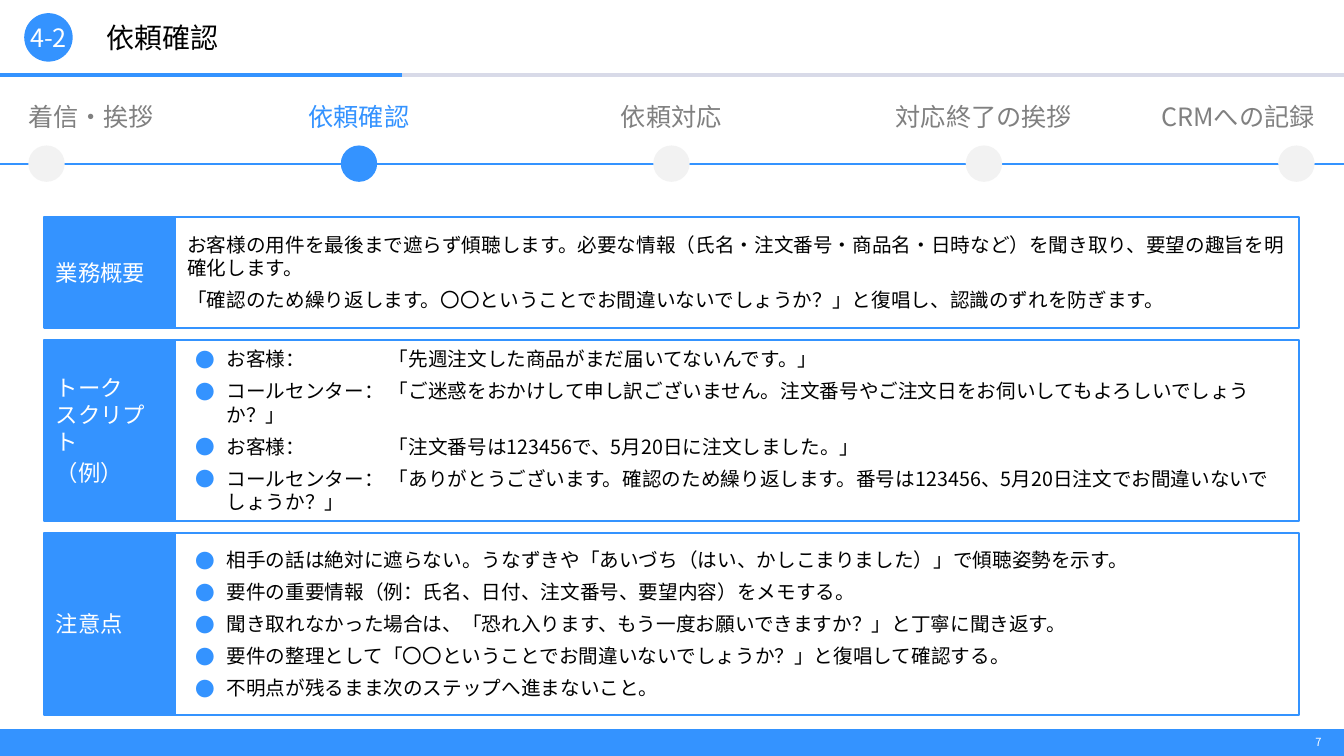
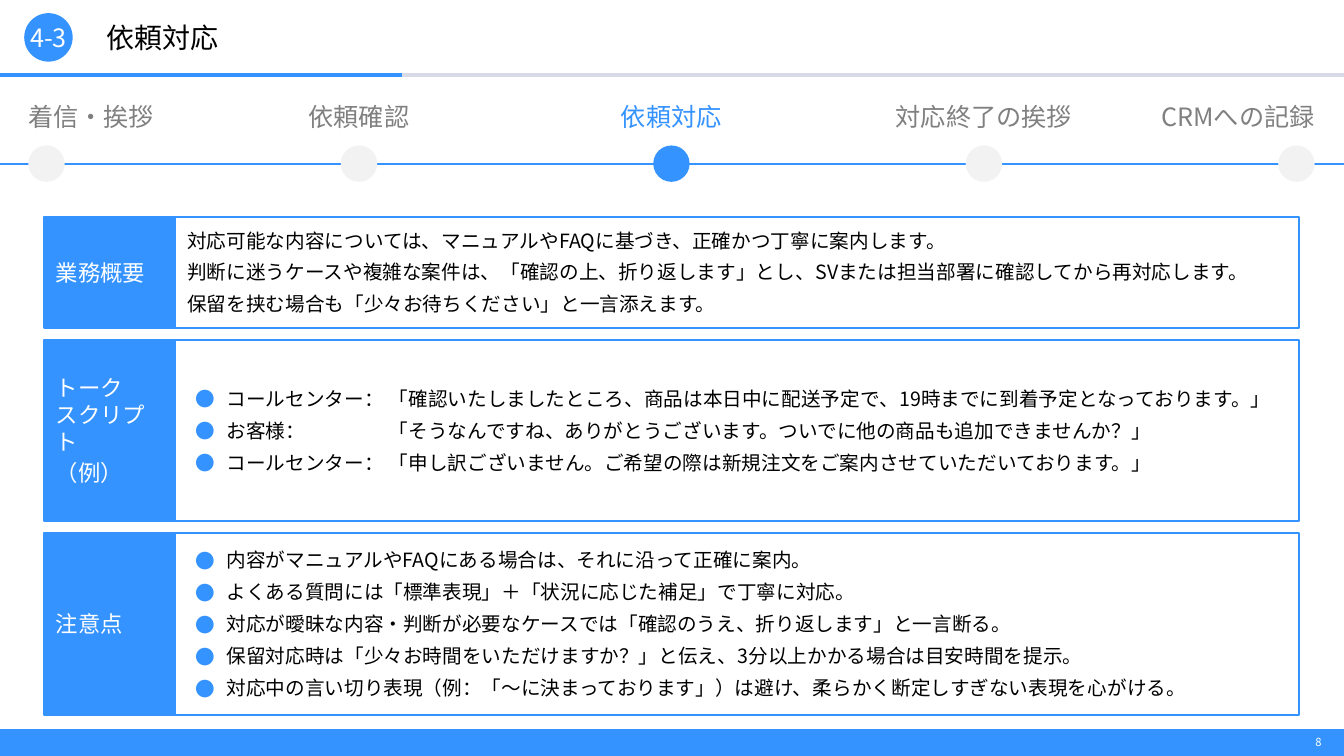
from dataclasses import dataclass

from lxml.etree import SubElement
from pptx import Presentation
from pptx.dml.color import RGBColor
from pptx.enum.shapes import MSO_CONNECTOR, MSO_SHAPE
from pptx.enum.text import MSO_ANCHOR, MSO_AUTO_SIZE, PP_ALIGN
from pptx.oxml.ns import qn
from pptx.util import Pt


@dataclass(frozen=True)
class Theme:
    font: str = "Noto Sans CJK JP"
    accent: str = "3493FF"
    rule: str = "D8DAE8"
    idle_dot: str = "F2F2F2"
    idle_label: str = "808080"
    ink: str = "000000"
    paper: str = "FFFFFF"
    title_size: int = 20
    step_size: int = 18
    heading_size: int = 16
    body_size: int = 14
    number_size: int = 8
    line_factor: float = 1.2


THEME = Theme()
WIDTH, HEIGHT = 960, 540

STEPS = ["着信・挨拶", "依頼確認", "依頼対応", "対応終了の挨拶", "CRMへの記録"]

SECTIONS = [
    {"heading": ["業務概要"], "key": "overview", "top": 154.8, "height": 79.2, "bullets": False},
    {"heading": ["トーク\vスクリプト", "（例）"], "key": "script", "top": 242.6, "height": 129.6, "bullets": True},
    {"heading": ["注意点"], "key": "cautions", "top": 380.9, "height": 129.6, "bullets": True},
]

PAGES = [
    {
        "number": 7,
        "chapter": "4-2",
        "step": 1,
        "overview": [
            "お客様の用件を最後まで遮らず傾聴します。必要な情報（氏名・注文番号・商品名・日時など）を聞き取り、要望の趣旨を明確化します。",
            "「確認のため繰り返します。〇〇ということでお間違いないでしょうか？」と復唱し、認識のずれを防ぎます。",
        ],
        "script": [
            "お客様：\t「先週注文した商品がまだ届いてないんです。」",
            "コールセンター：\t「ご迷惑をおかけして申し訳ございません。注文番号やご注文日をお伺いしてもよろしいでしょうか？」",
            "お客様：\t「注文番号は123456で、5月20日に注文しました。」",
            "コールセンター：\t「ありがとうございます。確認のため繰り返します。番号は123456、5月20日注文でお間違いないでしょうか？」",
        ],
        "cautions": [
            "相手の話は絶対に遮らない。うなずきや「あいづち（はい、かしこまりました）」で傾聴姿勢を示す。",
            "要件の重要情報（例：氏名、日付、注文番号、要望内容）をメモする。",
            "聞き取れなかった場合は、「恐れ入ります、もう一度お願いできますか？」と丁寧に聞き返す。",
            "要件の整理として「〇〇ということでお間違いないでしょうか？」と復唱して確認する。",
            "不明点が残るまま次のステップへ進まないこと。",
        ],
    },
    {
        "number": 8,
        "chapter": "4-3",
        "step": 2,
        "overview": [
            "対応可能な内容については、マニュアルやFAQに基づき、正確かつ丁寧に案内します。",
            "判断に迷うケースや複雑な案件は、「確認の上、折り返します」とし、SVまたは担当部署に確認してから再対応します。",
            "保留を挟む場合も「少々お待ちください」と一言添えます。",
        ],
        "script": [
            "コールセンター：\t「確認いたしましたところ、商品は本日中に配送予定で、19時までに到着予定となっております。」",
            "お客様：\t「そうなんですね、ありがとうございます。ついでに他の商品も追加できませんか？」",
            "コールセンター：\t「申し訳ございません。ご希望の際は新規注文をご案内させていただいております。」",
        ],
        "cautions": [
            "内容がマニュアルやFAQにある場合は、それに沿って正確に案内。",
            "よくある質問には「標準表現」＋「状況に応じた補足」で丁寧に対応。",
            "対応が曖昧な内容・判断が必要なケースでは「確認のうえ、折り返します」と一言断る。",
            "保留対応時は「少々お時間をいただけますか？」と伝え、3分以上かかる場合は目安時間を提示。",
            "対応中の言い切り表現（例：「〜に決まっております」）は避け、柔らかく断定しすぎない表現を心がける。",
        ],
    },
]

DOT, DOT_TOP, DOT_LEFT, DOT_STEP = 26, 103.9, 20.2, 223.2
LABEL_WIDTH, LABEL_INSET = 150.4, 7.2
HEADING_LEFT, HEADING_WIDTH, BODY_WIDTH = 31.4, 93.8, 803
BULLET_MARGIN, BULLET_HANG, QUOTE_TAB = 28.1, 22.3, 144


def rgb(code):
    return RGBColor.from_string(code)


def place(shape, left, top, width, height):
    shape.left, shape.top, shape.width, shape.height = map(Pt, (left, top, width, height))


def write(shape, lines, size, color, align=PP_ALIGN.LEFT, gap=0, margins=(7.2, 3.6, 7.2, 3.6), wrap=True):
    frame = shape.text_frame
    frame.text = "\n".join(lines)
    frame.auto_size = MSO_AUTO_SIZE.NONE
    frame.word_wrap = wrap
    frame.vertical_anchor = MSO_ANCHOR.MIDDLE
    frame.margin_left, frame.margin_top, frame.margin_right, frame.margin_bottom = map(Pt, margins)
    for index, paragraph in enumerate(frame.paragraphs):
        paragraph.alignment = align
        paragraph.line_spacing = Pt(round(size * THEME.line_factor, 1))
        paragraph.space_before = Pt(gap if index else 0)
        for run in paragraph.runs:
            run.font.name = THEME.font
            run.font.size = Pt(size)
            run.font.bold = False
            run.font.color.rgb = rgb(color)
            SubElement(run.font._element, qn("a:ea"), typeface=THEME.font)


def set_bullets(frame, bulleted):
    for paragraph in frame.paragraphs:
        properties = paragraph._p.get_or_add_pPr()
        properties.set("marL", str(Pt(BULLET_MARGIN if bulleted else 0)))
        properties.set("indent", str(Pt(-BULLET_HANG if bulleted else 0)))
        if not bulleted:
            SubElement(properties, qn("a:buNone"))
            continue
        properties.set("defTabSz", str(Pt(QUOTE_TAB / 2)))
        bullet_color = SubElement(properties, qn("a:buClr"))
        SubElement(bullet_color, qn("a:srgbClr"), val=THEME.accent)
        SubElement(properties, qn("a:buFont"), typeface=THEME.font)
        SubElement(properties, qn("a:buChar"), char="●")
        tabs = SubElement(properties, qn("a:tabLst"))
        SubElement(tabs, qn("a:tab"), pos=str(Pt(QUOTE_TAB)), algn="l")


def add_rule(slide, y, length, color, weight):
    rule = slide.shapes.add_connector(MSO_CONNECTOR.STRAIGHT, 0, Pt(y), Pt(length), Pt(y))
    rule.line.color.rgb = rgb(color)
    rule.line.width = Pt(weight)
    SubElement(rule._element.spPr, qn("a:effectLst"))


def add_block(slide, kind, box, fill):
    block = slide.shapes.add_shape(kind, *map(Pt, box))
    block.shadow.inherit = False
    block.fill.solid()
    block.fill.fore_color.rgb = rgb(fill)
    block.line.fill.background()
    return block


def add_label(slide, box, text, size, color, align):
    label = slide.shapes.add_textbox(*map(Pt, box))
    write(label, [text], size, color, align)


def outline(shape):
    shape.line.color.rgb = rgb(THEME.accent)
    shape.line.width = Pt(1.5)


def add_frame(slide, page):
    title = slide.shapes.title
    place(title, 28.8, 11.5, 902, 30.2)
    write(title, [STEPS[page["step"]]], THEME.title_size, THEME.ink, margins=(47.2, 3.6, 7.2, 3.6))
    add_rule(slide, 53.3, WIDTH, THEME.rule, 3)
    add_rule(slide, 53.3, 287.3, THEME.accent, 3)
    badge = add_block(slide, MSO_SHAPE.OVAL, (17.3, 9.4, 34.6, 34.6), THEME.accent)
    write(badge, [page["chapter"]], THEME.step_size, THEME.paper, PP_ALIGN.CENTER,
          margins=(5.8, 5.8, 5.8, 5.8), wrap=False)
    add_rule(slide, 530.6, WIDTH, THEME.accent, 20)
    add_label(slide, (915.8, 521.3, 35.3, 18), str(page["number"]), THEME.number_size, THEME.paper, PP_ALIGN.RIGHT)


def add_progress(slide, current):
    add_rule(slide, DOT_TOP + DOT / 2, WIDTH, THEME.accent, 1.5)
    for index, step in enumerate(STEPS):
        left = DOT_LEFT + DOT_STEP * index
        if index == 0:
            label_left, align = left - LABEL_INSET, PP_ALIGN.LEFT
        elif index == len(STEPS) - 1:
            label_left, align = left + DOT + LABEL_INSET - LABEL_WIDTH, PP_ALIGN.RIGHT
        else:
            label_left, align = left + (DOT - LABEL_WIDTH) / 2, PP_ALIGN.CENTER
        active = index == current
        add_label(slide, (label_left, 70.6, LABEL_WIDTH, 25.2), step, THEME.step_size,
                  THEME.accent if active else THEME.idle_label, align)
        add_block(slide, MSO_SHAPE.OVAL, (left, DOT_TOP, DOT, DOT), THEME.accent if active else THEME.idle_dot)


def add_section(slide, section, body, lines):
    top, height = section["top"], section["height"]
    margins = (8.6, 3.6, 7.2, 3.6)
    place(body, HEADING_LEFT + HEADING_WIDTH, top, BODY_WIDTH, height)
    outline(body)
    write(body, lines, THEME.body_size, THEME.ink, gap=6, margins=margins)
    set_bullets(body.text_frame, section["bullets"])
    heading = add_block(slide, MSO_SHAPE.RECTANGLE, (HEADING_LEFT, top, HEADING_WIDTH, height), THEME.accent)
    outline(heading)
    write(heading, section["heading"], THEME.heading_size, THEME.paper, gap=3, margins=margins)


def main():
    deck = Presentation()
    deck.slide_width, deck.slide_height = Pt(WIDTH), Pt(HEIGHT)
    comparison = deck.slide_layouts.get_by_name("Comparison")
    for page in PAGES:
        slide = deck.slides.add_slide(comparison)
        bodies = [holder for holder in slide.placeholders if holder.placeholder_format.idx > 0]
        add_frame(slide, page)
        for section, body in zip(SECTIONS, bodies):
            add_section(slide, section, body, page[section["key"]])
        for unused in bodies[len(SECTIONS):]:
            unused._element.getparent().remove(unused._element)
        add_progress(slide, page["step"])
    deck.save("out.pptx")


if __name__ == "__main__":
    main()
